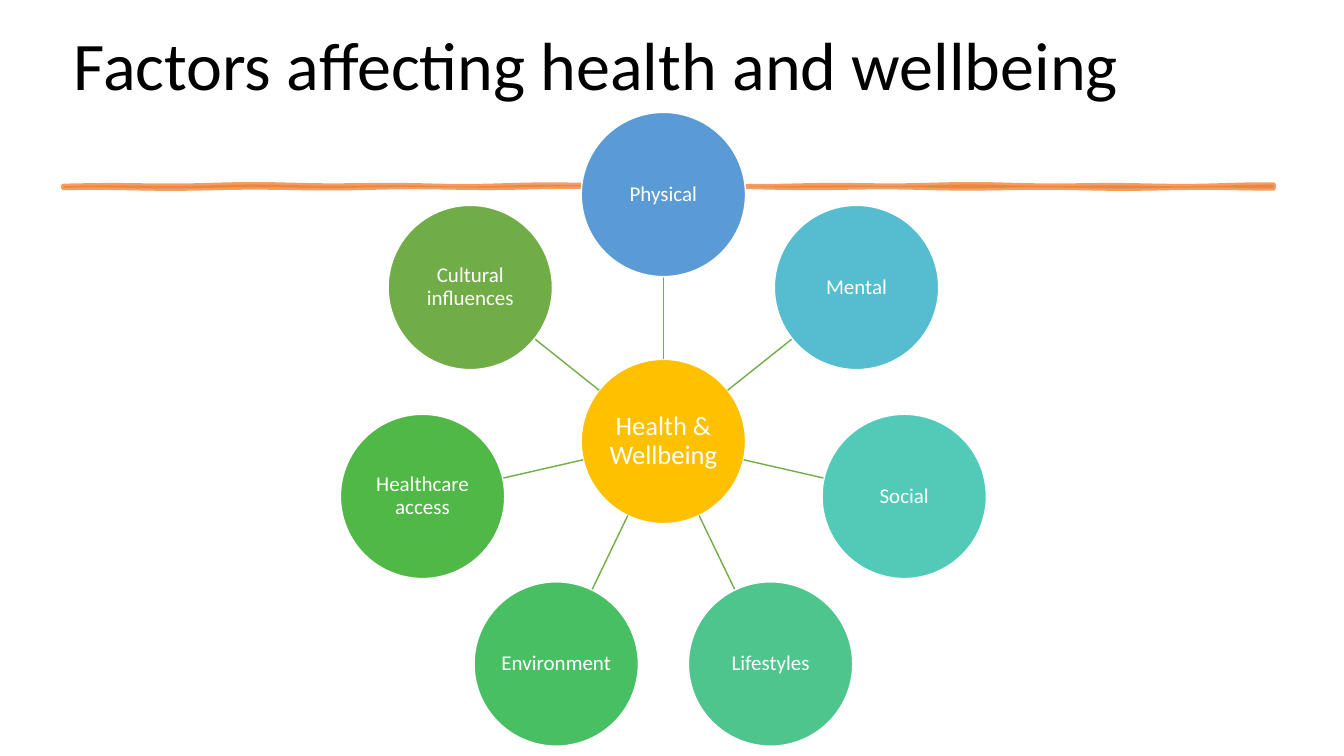
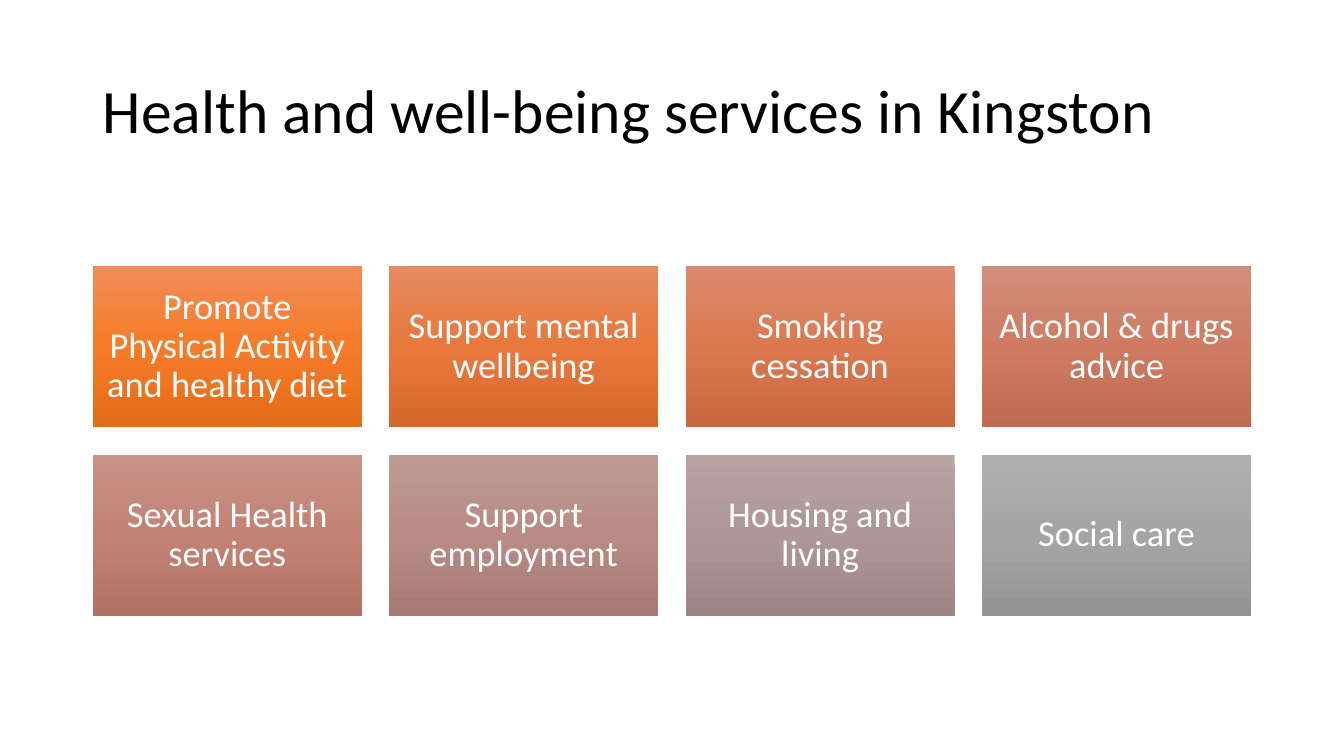
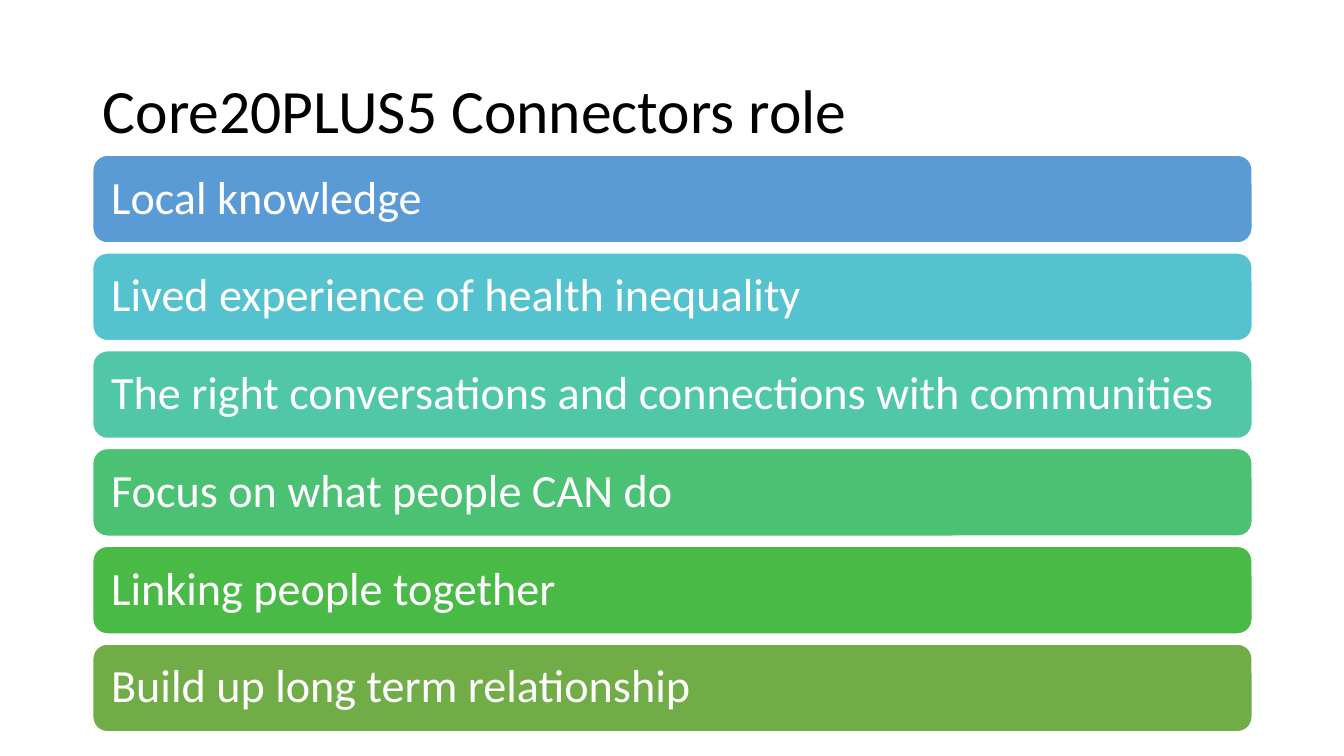
from math import cos, pi, sin
from copy import deepcopy

from pptx import Presentation
from pptx.dml.color import RGBColor
from pptx.enum.shapes import MSO_CONNECTOR, MSO_SHAPE
from pptx.enum.text import MSO_ANCHOR, MSO_AUTO_SIZE, PP_ALIGN
from pptx.oxml.ns import qn
from pptx.util import Inches, Pt
from lxml.etree import SubElement

FONT = "Calibri"
BLACK = RGBColor(0x00, 0x00, 0x00)
WHITE = RGBColor(0xFF, 0xFF, 0xFF)
ORANGE = RGBColor(0xED, 0x7D, 0x31)
GOLD = RGBColor(0xFF, 0xC0, 0x00)
GREEN = RGBColor(0x70, 0xAD, 0x47)
BLUE = RGBColor(0x5B, 0x9B, 0xD5)


def set_text(shape, text, size, color, align, anchor):
    frame = shape.text_frame
    frame.word_wrap = True
    frame.auto_size = MSO_AUTO_SIZE.NONE
    frame.vertical_anchor = anchor
    paragraph = frame.paragraphs[0]
    paragraph.alignment = align
    paragraph.line_spacing = 0.9
    run = paragraph.add_run()
    run.text = text
    run.font.name = FONT
    run.font.size = Pt(size)
    run.font.color.rgb = color


def add_label(slide, preset, box, text, size, inset, fill=None, align=PP_ALIGN.CENTER):
    """Add a preset shape with white text; a plain fill also gets a white outline."""
    shape = slide.shapes.add_shape(preset, *[Inches(v) for v in box])
    shape.shadow.inherit = False
    if fill is None:
        shape.line.fill.background()
    else:
        shape.fill.solid()
        shape.fill.fore_color.rgb = fill
        shape.line.color.rgb = WHITE
        shape.line.width = Pt(1)
    frame = shape.text_frame
    frame.margin_left = frame.margin_right = Inches(inset)
    frame.margin_top = frame.margin_bottom = Inches(inset)
    set_text(shape, text, size, WHITE, align, MSO_ANCHOR.MIDDLE)
    return shape


prs = Presentation()
prs.slide_width = Inches(13.33)
prs.slide_height = Inches(7.5)

# Slides and their titles
TITLE_BOX = (0.92, 0.4, 11.5, 1.45)
titles = [
    ("Factors affecting health and wellbeing", (0.63, 0.26, 12.05, 0.83), 48.6, MSO_ANCHOR.BOTTOM),
    ("Health and well-being services in Kingston", TITLE_BOX, 44, MSO_ANCHOR.MIDDLE),
    ("Core20PLUS5 Connectors role", TITLE_BOX, 44, MSO_ANCHOR.MIDDLE),
]
for text, box, size, anchor in titles:
    slide = prs.slides.add_slide(prs.slide_layouts[5])
    title = slide.shapes.title
    title.left, title.top, title.width, title.height = [Inches(v) for v in box]
    set_text(title, text, size, BLACK, PP_ALIGN.LEFT, anchor)
factors_slide, services_slide, role_slide = prs.slides

# Slide 1: hand-drawn rule under the title
RULE_LEFT, RULE_STEP, RULE_STEPS = 0.63, 0.1, 120
rule_xs = [RULE_LEFT + RULE_STEP * i for i in range(RULE_STEPS + 1)]
upper_edge = [(x, 1.84 + 0.01 * sin(3.1 * x) * cos(1.3 * x)) for x in rule_xs]
lower_edge = [(x, 1.86 + 0.01 * sin(2.3 * x + 1) * cos(1.7 * x)) for x in reversed(rule_xs)]
rule_points = [(Inches(x), Inches(y)) for x, y in upper_edge + lower_edge]
builder = factors_slide.shapes.build_freeform(*rule_points[0])
builder.add_line_segments(rule_points[1:], close=True)
rule = builder.convert_to_shape()
rule.shadow.inherit = False
rule.fill.solid()
rule.fill.fore_color.rgb = ORANGE
rule.line.color.rgb = ORANGE
rule.line.width = Pt(3.5)
for color in rule._element.spPr.iter(qn("a:srgbClr")):
    SubElement(color, qn("a:alpha")).set("val", "75000")

# Slide 1: wheel of factors around the hub
HUB_X, HUB_Y = 6.58, 4.38
ORBIT, DIAMETER = 2.45, 1.63
RADIUS = DIAMETER / 2
factors = [
    ("Physical", BLUE),
    ("Mental", RGBColor(0x56, 0xBC, 0xD0)),
    ("Social", RGBColor(0x52, 0xCA, 0xB8)),
    ("Lifestyles", RGBColor(0x4D, 0xC5, 0x8D)),
    ("Environment", RGBColor(0x49, 0xBF, 0x64)),
    ("Healthcare access", RGBColor(0x50, 0xB8, 0x46)),
    ("Cultural influences", GREEN),
]
add_label(factors_slide, MSO_SHAPE.OVAL, (HUB_X - RADIUS, HUB_Y - RADIUS, DIAMETER, DIAMETER),
          "Health & Wellbeing", 19, 0.01, GOLD)
for i, (factor, color) in enumerate(factors):
    angle = 2 * pi * i / len(factors)
    dx, dy = sin(angle), -cos(angle)
    inner, outer = RADIUS, ORBIT - RADIUS
    spoke = factors_slide.shapes.add_connector(
        MSO_CONNECTOR.STRAIGHT,
        Inches(HUB_X + inner * dx), Inches(HUB_Y + inner * dy),
        Inches(HUB_X + outer * dx), Inches(HUB_Y + outer * dy))
    spoke.line.color.rgb = GREEN
    spoke.line.width = Pt(1)
    SubElement(spoke._element.spPr, qn("a:effectLst"))
    left, top = HUB_X + ORBIT * dx - RADIUS, HUB_Y + ORBIT * dy - RADIUS
    add_label(factors_slide, MSO_SHAPE.OVAL, (left, top, DIAMETER, DIAMETER),
              factor, 15, 0.01, color)

# Slide 2: grid of services, each with a top-to-bottom gradient
COLUMNS, CARD_W, CARD_H, GAP = 4, 2.67, 1.6, 0.27
services = [
    ("Promote Physical Activity and healthy diet", ("F18C57", "F67B28", "E56C19")),
    ("Support mental wellbeing", ("E58A61", "E8783C", "D7682C")),
    ("Smoking cessation", ("DA8A6E", "DB7850", "CA673F")),
    ("Alcohol & drugs advice", ("D08D7B", "CF7B62", "BD6B52")),
    ("Sexual Health services", ("C79288", "C38274", "B17163")),
    ("Support employment", ("BE9A95", "B88B85", "A67A74")),
    ("Housing and living", ("B6A4A2", "AE9796", "9C8584")),
    ("Social care", ("AFAFAF", "A5A5A5", "939393")),
]
for i, (service, shades) in enumerate(services):
    row, column = divmod(i, COLUMNS)
    box = (0.92 + column * (CARD_W + GAP), 2.64 + row * (CARD_H + GAP), CARD_W, CARD_H)
    card = add_label(services_slide, MSO_SHAPE.RECTANGLE, box, service, 26, 0.11)
    card.fill.gradient()
    card.fill.gradient_angle = 270
    stop_list = card._element.spPr.find(".//" + qn("a:gsLst"))
    stop_list.append(deepcopy(stop_list[0]))
    for stop, position, shade in zip(card.fill.gradient_stops, (0, 0.5, 1), shades):
        stop.position = position
        stop.color.rgb = RGBColor.from_string(shade)

# Slide 3: stacked bars of the role
BAR_H, BAR_PITCH = 0.87, 0.97
role_parts = [
    ("Local knowledge", BLUE),
    ("Lived experience of health inequality", RGBColor(0x55, 0xC3, 0xCF)),
    ("The right conversations and connections with communities", RGBColor(0x50, 0xC8, 0xA7)),
    ("Focus on what people CAN do", RGBColor(0x4B, 0xC1, 0x74)),
    ("Linking people together", RGBColor(0x4A, 0xBA, 0x46)),
    ("Build up long term relationship", GREEN),
]
for i, (part, color) in enumerate(role_parts):
    add_label(role_slide, MSO_SHAPE.ROUNDED_RECTANGLE, (0.92, 1.54 + i * BAR_PITCH, 11.5, BAR_H),
              part, 33, 0.14, color, PP_ALIGN.LEFT)

prs.save("out.pptx")
